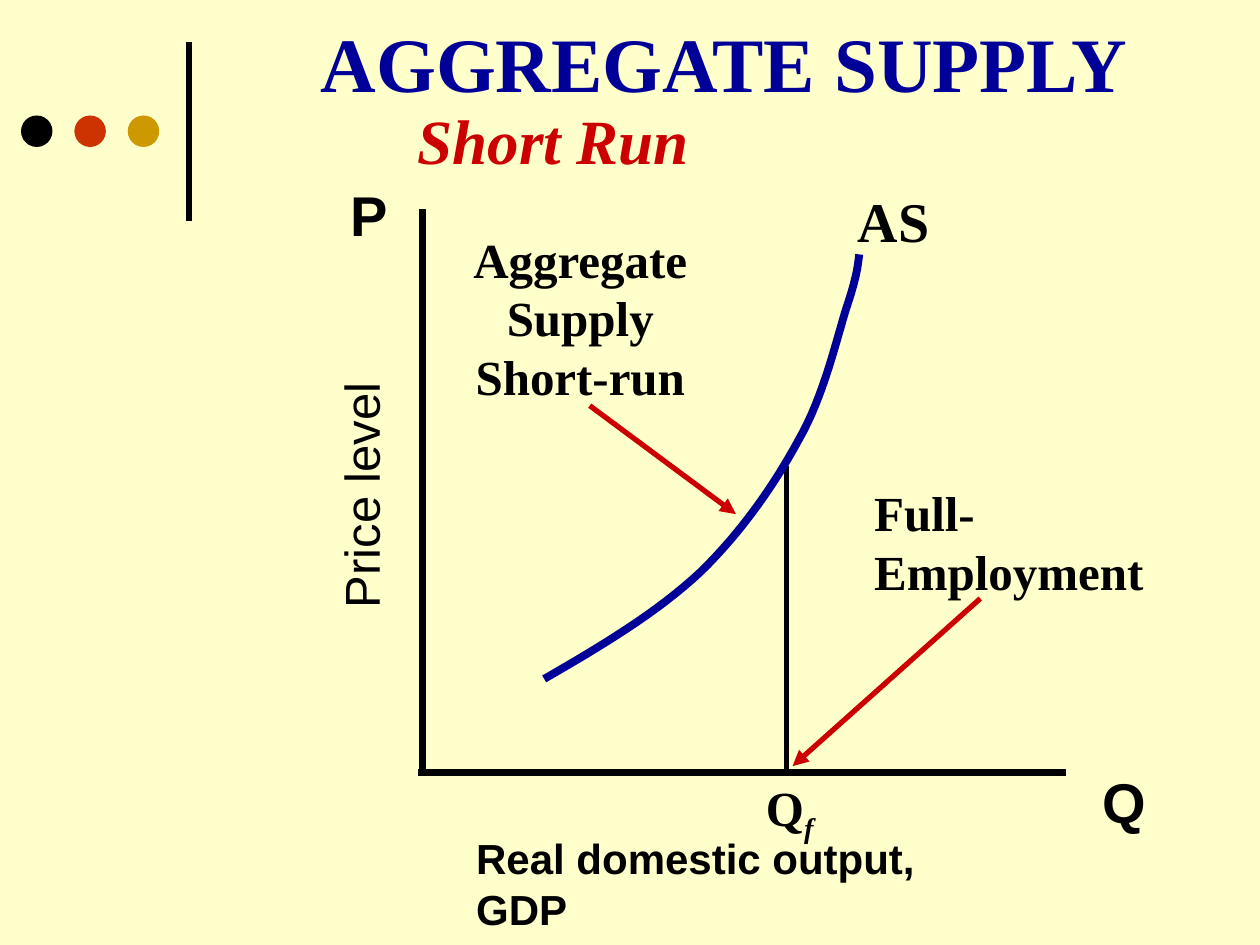
from pptx import Presentation
from pptx.dml.color import RGBColor
from pptx.enum.shapes import MSO_CONNECTOR, MSO_SHAPE
from pptx.enum.text import MSO_ANCHOR, PP_ALIGN
from pptx.oxml.ns import qn
from pptx.util import Pt
from lxml.etree import SubElement

COLORS = {"cream": "FFFFCC", "black": "000000", "navy": "000099", "red": "CC0000",
          "rust": "CC3300", "gold": "CC9900"}
C = {name: RGBColor.from_string(value) for name, value in COLORS.items()}
SERIF, SANS = "Times New Roman", "Arial"


def add_line(x1, y1, x2, y2, color="black", width=3, arrow=False):
    ln = s.shapes.add_connector(MSO_CONNECTOR.STRAIGHT, Pt(x1), Pt(y1), Pt(x2), Pt(y2))
    ln.line.color.rgb = C[color]
    ln.line.width = Pt(width)
    SubElement(ln._element.spPr, qn("a:effectLst"))
    if arrow:
        SubElement(ln.line._get_or_add_ln(), qn("a:tailEnd"), type="triangle")


def set_text(sp, lines, size, font=SERIF, color="black", bold=True, italic=False,
             align=PP_ALIGN.LEFT, wrap=False):
    tf = sp.text_frame
    tf.word_wrap = wrap
    tf.vertical_anchor = MSO_ANCHOR.TOP
    tf.margin_left = tf.margin_right = Pt(7.2)
    tf.margin_top = tf.margin_bottom = Pt(3.6)
    for i, line in enumerate(lines):
        p = tf.add_paragraph() if i else tf.paragraphs[0]
        p.alignment = align
        r = p.add_run()
        r.text = line
        r.font.name, r.font.size = font, Pt(size)
        r.font.bold, r.font.italic = bold, italic
        r.font.color.rgb = C[color]


prs = Presentation()
prs.slide_width, prs.slide_height = Pt(720), Pt(540)
s = prs.slides.add_slide(prs.slide_layouts[5])
s.background.fill.solid()
s.background.fill.fore_color.rgb = C["cream"]

add_line(108, 126, 108, 24)
for i, color in enumerate(["black", "rust", "gold"]):
    dot = s.shapes.add_shape(MSO_SHAPE.OVAL, Pt(12 + 30.5 * i), Pt(66), Pt(18), Pt(18))
    dot.shadow.inherit = False
    dot.fill.solid()
    dot.fill.fore_color.rgb = C[color]
    dot.line.fill.background()

title = s.shapes.title
title.left, title.top, title.width, title.height = Pt(176), Pt(5.5), Pt(484), Pt(60)
set_text(title, ["AGGREGATE SUPPLY"], 44, color="navy")

add_line(449.3, 266.4, 449.3, 440)
add_line(241.2, 119.5, 241.2, 442, width=4)
add_line(239, 441.4, 609, 441.4, width=4)

start = (311, 388)
segments = [
    ((343.4, 369.4), (375.8, 349.9), (400.3, 326.9)),
    ((424.1, 303.8), (442.8, 276.5), (456.5, 251.3)),
    ((470.9, 226.1), (478.1, 193.7), (483.8, 175.7)),
    ((489.6, 158.4), (490.3, 151.9), (491, 145.4)),
]
steps = 16
units = 100
points = [start]
for p1, p2, p3 in segments:
    p0 = points[-1]
    for t in [k / steps for k in range(1, steps + 1)]:
        u = 1 - t
        points.append(tuple(u**3 * a + 3 * u * u * t * b + 3 * u * t * t * c + t**3 * d
                            for a, b, c, d in zip(p0, p1, p2, p3)))
points = [(x * units, y * units) for x, y in points]
builder = s.shapes.build_freeform(*points[0], scale=Pt(1) / units)
builder.add_line_segments(points[1:], close=False)
curve = builder.convert_to_shape()
curve.shadow.inherit = False
curve.fill.background()
curve.line.color.rgb = C["navy"]
curve.line.width = Pt(4.5)

labels = [
    ((134, 262.8, 143.3, 40.3), ["Price level"], 28, {"font": SANS, "bold": False}),
    ((265, 472.3, 302, 66), ["Real domestic output, GDP"], 24, {"font": SANS, "wrap": True}),
    ((622.8, 434.9, 38.9, 45.4), ["Q"], 32, {"font": SANS}),
    ((193, 99.4, 35.3, 45.4), ["P"], 32, {"font": SANS}),
    ((231.5, 54.7, 182, 50.4), ["Short Run"], 36, {"color": "red", "italic": True}),
    ((483.1, 103, 55.4, 45.4), ["AS"], 32, {}),
    ((262.8, 127.4, 137.5, 108), ["Aggregate", "Supply", "Short-run"], 28,
     {"align": PP_ALIGN.CENTER}),
    ((430.6, 440.6, 42.5, 41), ["Q"], 28, {}),
    ((492.5, 272.2, 168.5, 74.2), ["Full-", "Employment"], 28, {}),
]
boxes = {}
for at, lines, size, style in labels:
    sp = s.shapes.add_textbox(*[Pt(v) for v in at])
    set_text(sp, lines, size, **style)
    boxes[lines[0], size] = sp
boxes["Price level", 28].rotation = 270

r = boxes["Q", 28].text_frame.paragraphs[0].add_run()
r.text = "f"
r.font.name, r.font.size = SERIF, Pt(28)
r.font.bold = r.font.italic = True
r.font.color.rgb = C["black"]
r.font._element.set("baseline", "-25000")

add_line(337, 231.8, 420.5, 293.8, "red", arrow=True)
add_line(560.2, 342, 452.9, 437.8, "red", arrow=True)

prs.save("out.pptx")
